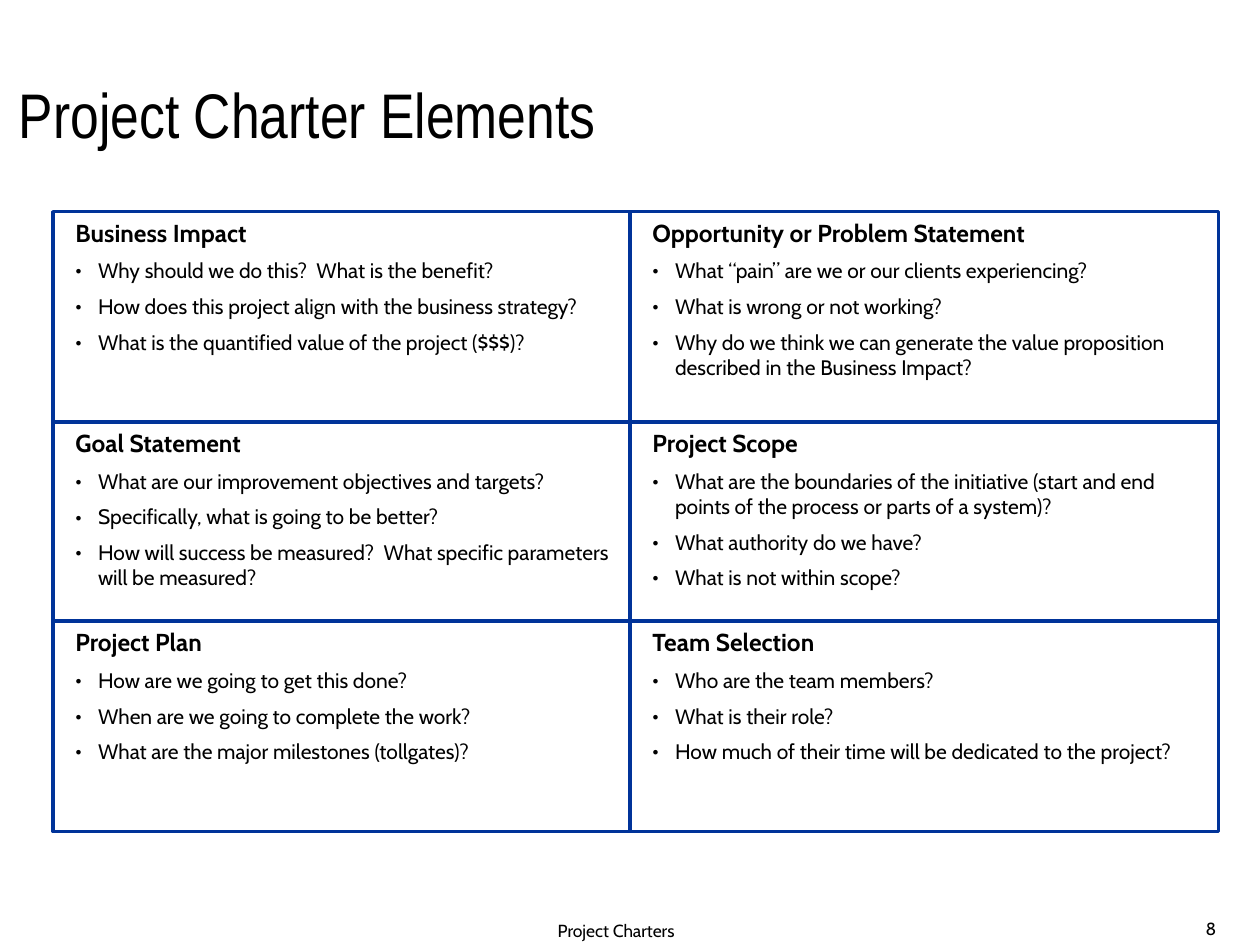
"""Build the Project Charter Elements slide: a two-by-three grid of guiding questions."""
import pptx
import pptx.dml.color
import pptx.enum.shapes
import pptx.enum.text
import pptx.oxml.ns
import pptx.util
from lxml import etree

Inches = pptx.util.Inches
Pt = pptx.util.Pt
RGB = pptx.dml.color.RGBColor.from_string
ALIGN = pptx.enum.text.PP_ALIGN
ANCHOR = pptx.enum.text.MSO_ANCHOR
qn = pptx.oxml.ns.qn

TITLE = "Project Charter Elements"
FOOTER = "Project Charters"
PAGE = "8"
ELEMENTS = [
    [
        ("Business Impact", [
            "Why should we do this?  What is the benefit?",
            "How does this project align with the business strategy?",
            "What is the quantified value of the project ($$$)?",
        ]),
        ("Opportunity or Problem Statement", [
            "What “pain” are we or our clients experiencing?",
            "What is wrong or not working?",
            "Why do we think we can generate the value proposition "
            "described in the Business Impact?",
        ]),
    ],
    [
        ("Goal Statement", [
            "What are our improvement objectives and targets?",
            "Specifically, what is going to be better?",
            "How will success be measured?  What specific parameters will be measured?",
        ]),
        ("Project Scope", [
            "What are the boundaries of the initiative "
            "(start and end points of the process or parts of a system)?",
            "What authority do we have?",
            "What is not within scope?",
        ]),
    ],
    [
        ("Project Plan", [
            "How are we going to get this done?",
            "When are we going to complete the work?",
            "What are the major milestones (tollgates)?",
        ]),
        ("Team Selection", [
            "Who are the team members?",
            "What is their role?",
            "How much of their time will be dedicated to the project?",
        ]),
    ],
]

THEME = {
    "title_font": "Arial Narrow", "body_font": "Cabin",
    "text": "000000", "rule": "003399",
    "title": 36, "heading": 14, "question": 12, "footer": 10,
    "rule_width": 2, "gap": 6,
}
LEFT, RIGHT, MIDDLE = 0.42, 9.67, 5
ROW_EDGES = [1.68, 3.35, 4.93, 6.6]
CELL_INSET, CELL_WIDTH, CELL_HEIGHT = 0.08, 4.5, 1.58
INDENT = 0.18


def style(paragraph, size, font="body_font", bold=False):
    paragraph.font.name = THEME[font]
    paragraph.font.size = Pt(THEME[size])
    paragraph.font.bold = bold
    paragraph.font.color.rgb = RGB(THEME["text"])


def add_text_frame(slide, left, top, width, height):
    frame = slide.shapes.add_textbox(*map(Inches, (left, top, width, height))).text_frame
    frame.word_wrap = True
    return frame


def add_bullet(paragraph):
    properties = paragraph._p.get_or_add_pPr()
    color = etree.SubElement(properties, qn("a:buClr"))
    etree.SubElement(color, qn("a:srgbClr"), val=THEME["text"])
    etree.SubElement(properties, qn("a:buFont"), typeface=THEME["body_font"])
    etree.SubElement(properties, qn("a:buChar"), char="•")


def add_element(slide, left, top, heading, questions):
    frame = add_text_frame(slide, left, top, CELL_WIDTH, CELL_HEIGHT)
    for index, wording in enumerate([heading] + questions):
        paragraph = frame.add_paragraph() if index else frame.paragraphs[0]
        paragraph.text = wording
        style(paragraph, "question" if index else "heading", bold=not index)
        properties = paragraph._p.get_or_add_pPr()
        properties.set("marL", str(Inches(INDENT)))
        properties.set("indent", str(-Inches(INDENT)))
        if index:
            paragraph.space_before = Pt(THEME["gap"])
            add_bullet(paragraph)


def style_rule(line):
    line.color.rgb = RGB(THEME["rule"])
    line.width = Pt(THEME["rule_width"])


def add_rule(slide, *ends):
    rule = slide.shapes.add_connector(
        pptx.enum.shapes.MSO_CONNECTOR.STRAIGHT, *map(Inches, ends))
    style_rule(rule.line)
    etree.SubElement(rule._element.spPr, qn("a:effectLst"))


def add_grid(slide):
    top, bottom = ROW_EDGES[0], ROW_EDGES[-1]
    frame = slide.shapes.add_shape(
        pptx.enum.shapes.MSO_SHAPE.RECTANGLE,
        *map(Inches, (LEFT, top, RIGHT - LEFT, bottom - top)))
    frame.shadow.inherit = False
    frame.fill.background()
    style_rule(frame.line)
    add_rule(slide, MIDDLE, bottom, MIDDLE, top)
    for edge in ROW_EDGES[1:-1]:
        add_rule(slide, LEFT, edge, RIGHT, edge)


def add_title(slide):
    title = slide.shapes.title
    title.left, title.top, title.width, title.height = map(Inches, (0.05, 0.01, 8.31, 1.25))
    title.text_frame.text = TITLE
    title.text_frame.vertical_anchor = ANCHOR.BOTTOM
    title.text_frame.auto_size = pptx.enum.text.MSO_AUTO_SIZE.NONE
    heading = title.text_frame.paragraphs[0]
    heading.alignment = ALIGN.LEFT
    heading.line_spacing = 0.9
    style(heading, "title", "title_font")


def add_footer(slide, wording, left, width, alignment, anchor):
    frame = add_text_frame(slide, left, 7.25, width, 0.25)
    frame.text = wording
    frame.vertical_anchor = anchor
    frame.paragraphs[0].alignment = alignment
    style(frame.paragraphs[0], "footer")


def main():
    deck = pptx.Presentation()
    deck.slide_width, deck.slide_height = Inches(10), Inches(7.5)
    slide = deck.slides.add_slide(deck.slide_layouts.get_by_name("Title Only"))
    add_title(slide)
    add_footer(slide, PAGE, 9.47, 0.43, ALIGN.LEFT, ANCHOR.BOTTOM)
    add_footer(slide, FOOTER, 1.55, 6.68, ALIGN.CENTER, ANCHOR.TOP)
    add_grid(slide)
    for top, row in zip(ROW_EDGES, ELEMENTS):
        for left, (heading, questions) in zip((LEFT, MIDDLE), row):
            add_element(slide, left + CELL_INSET, top, heading, questions)
    deck.save("out.pptx")


if __name__ == "__main__":
    main()
